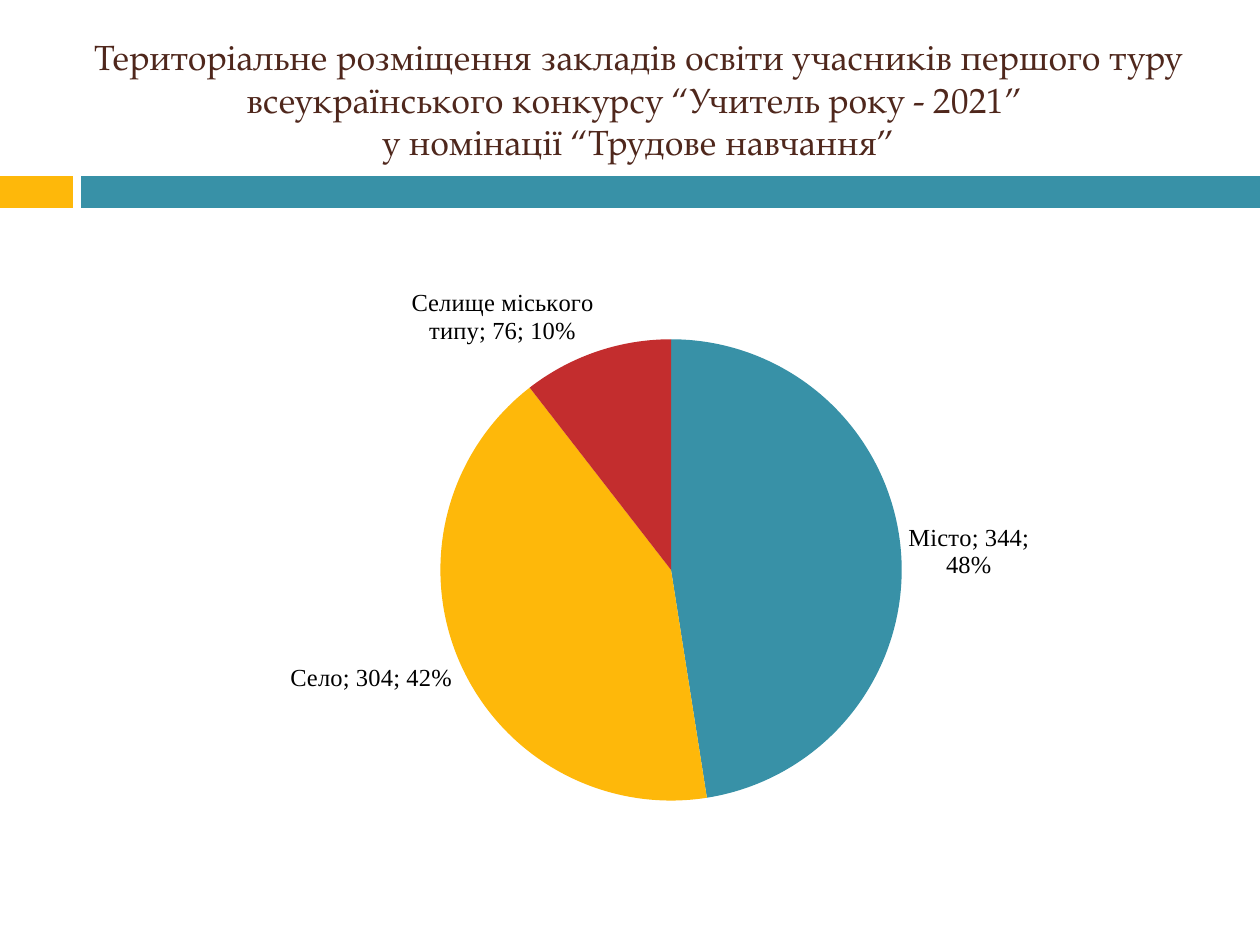
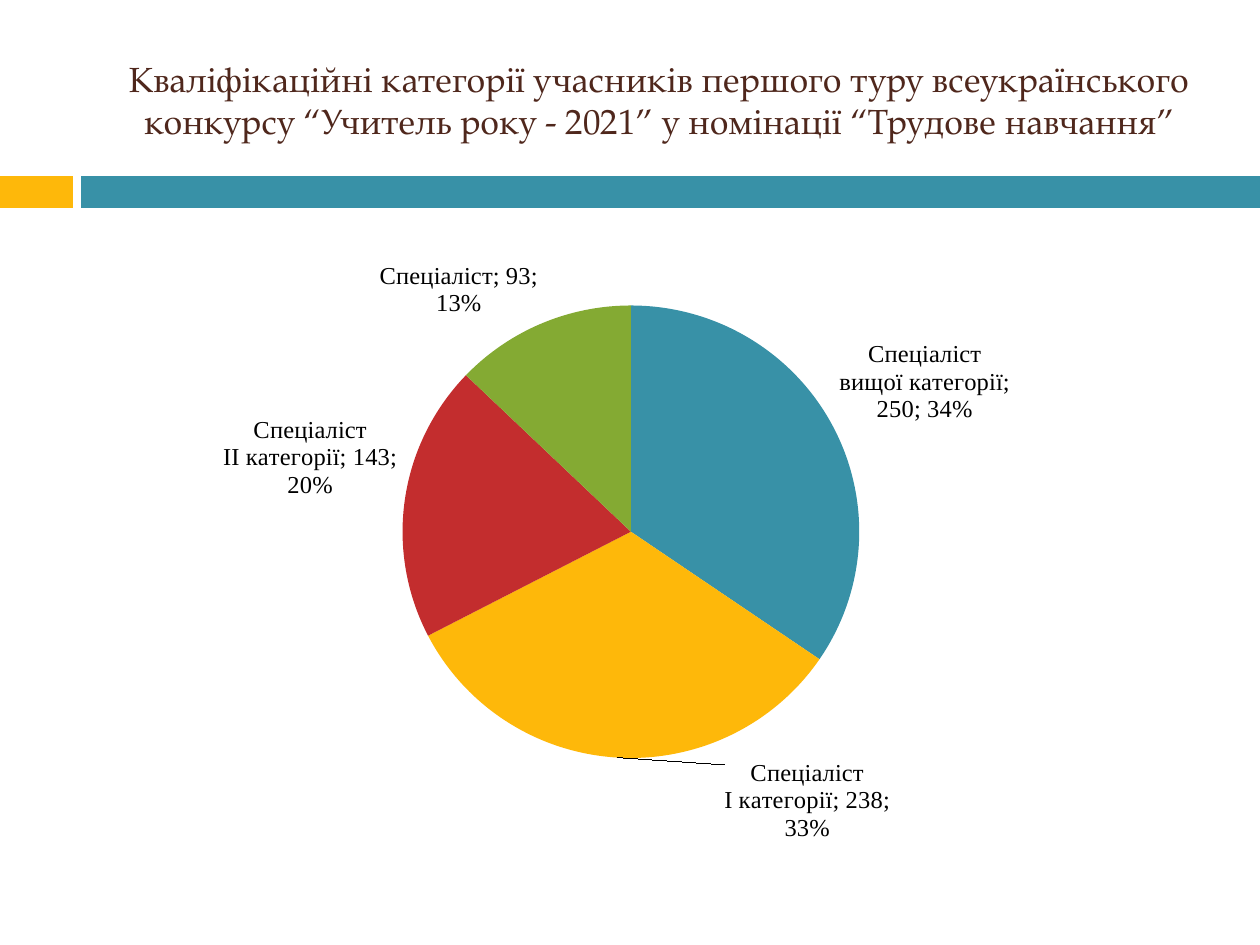
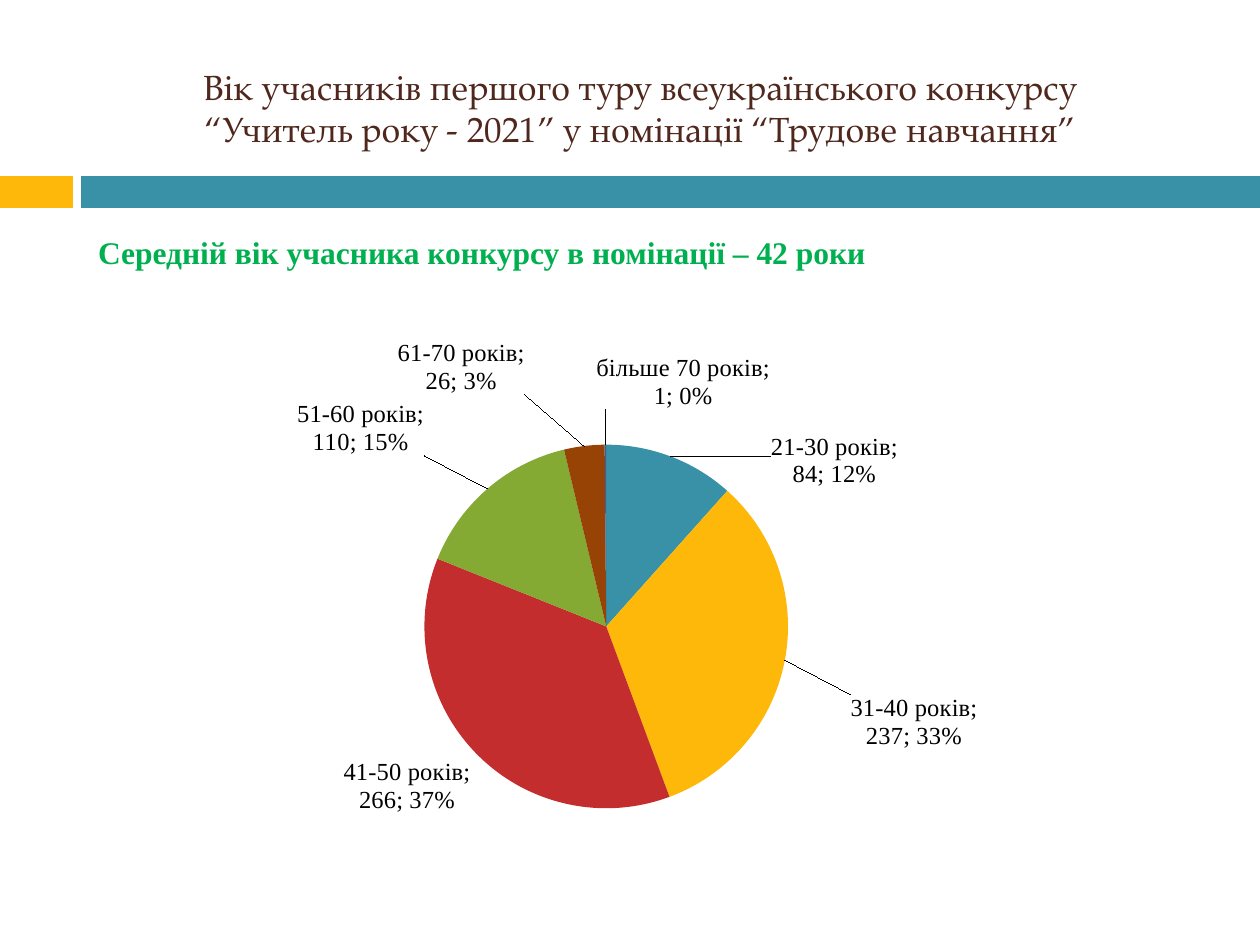
from dataclasses import dataclass
from typing import NamedTuple

import lxml.etree
import pptx
import pptx.chart.data
import pptx.dml.color
import pptx.enum.chart
import pptx.enum.shapes
import pptx.enum.text
import pptx.oxml.ns
import pptx.util

EMU_PER_PX = 914400 / 126
TEAL, AMBER, RED, GREEN, BROWN, INDIGO = (
    "3891A7", "FEB80A", "C32D2E", "84AA33", "964305", "475A8D")
SLICE_COLOURS = (TEAL, AMBER, RED, GREEN, BROWN, INDIGO)
TITLE_COLOUR = "4F271C"
ACCENT_TEXT = "00B050"
BLACK = "000000"
TITLE_FONT = "TeX Gyre Pagella"
BODY_FONT = "Times New Roman"
CHART_FONT = "Calibri"


class Box(NamedTuple):
    left: int
    top: int
    width: int
    height: int


class Band(NamedTuple):
    box: Box
    colour: str


class Fractions(NamedTuple):
    x: float
    y: float
    w: float | None = None
    h: float | None = None


class Slice(NamedTuple):
    category: str
    value: int
    label: str = ""
    offset: Fractions | None = None


@dataclass(frozen=True)
class PieSlide:
    title: str
    title_box: Box
    chart_box: Box
    slices: tuple[Slice, ...]
    plot: Fractions | None = None
    summary: str = ""


BANDS = (
    Band(Box(0, 176, 73, 32), AMBER),
    Band(Box(81, 176, 1179, 32), TEAL),
)
SUMMARY_BOX = Box(29, 227, 906, 50)

PIE_SLIDES = (
    PieSlide(
        "Територіальне розміщення закладів освіти учасників першого туру "
        "всеукраїнського конкурсу “Учитель року - 2021” \v"
        "у номінації “Трудове навчання”",
        Box(69, 31, 1139, 136),
        Box(178, 266, 955, 552),
        (
            Slice("Місто", 344),
            Slice("Село", 304),
            Slice("Селище міського типу", 76),
        ),
    ),
    PieSlide(
        "Кваліфікаційні категорії учасників першого туру всеукраїнського "
        "конкурсу “Учитель року - 2021” у номінації “Трудове навчання”",
        Box(84, 31, 1150, 136),
        Box(129, 246, 1004, 601),
        (
            Slice("Спеціаліст вищої категорії", 250,
                  "Спеціаліст\nвищої категорії; 250; 34%"),
            Slice("Спеціаліст І категорії", 238,
                  "Спеціаліст\nІ категорії; 238; 33%", Fractions(0.19, 0)),
            Slice("Спеціаліст ІІ категорії", 143,
                  "Спеціаліст\nІІ категорії; 143; 20%"),
            Slice("Спеціаліст", 93),
        ),
        Fractions(0.11, 0.1, 0.78, 0.76),
    ),
    PieSlide(
        "Вік учасників першого туру всеукраїнського конкурсу\v"
        "“Учитель року - 2021” у номінації “Трудове навчання”",
        Box(78, 39, 1124, 136),
        Box(129, 296, 974, 551),
        (
            Slice("21-30 років", 84, "21-30 років;\n84; 12%", Fractions(0.1, 0.07)),
            Slice("31-40 років", 237, "31-40 років;\n237; 33%", Fractions(0.06, 0.06)),
            Slice("41-50 років", 266, "41-50 років;\n266; 37%"),
            Slice("51-60 років", 110, "51-60 років;\n110; 15%", Fractions(-0.06, -0.05)),
            Slice("61-70 років", 26, "61-70 років;\n26; 3%", Fractions(-0.06, -0.08)),
            Slice("більше 70 років", 1, offset=Fractions(0.08, -0.05)),
        ),
        Fractions(0.14, 0.27, 0.7, 0.66),
        "Середній вік учасника конкурсу в номінації – 42 роки",
    ),
)


def px(length: int) -> int:
    return round(length * EMU_PER_PX)


def emu_box(box: Box) -> tuple[int, ...]:
    return tuple(px(length) for length in box)


def rgb(colour: str) -> pptx.dml.color.RGBColor:
    return pptx.dml.color.RGBColor.from_string(colour)


def set_font(font, name: str, size: int, colour: str, bold: bool = False) -> None:
    font.name = name
    font.size = pptx.util.Pt(size)
    font.bold = bold
    font.color.rgb = rgb(colour)


def chart_tag(name: str) -> str:
    return pptx.oxml.ns.qn(f"c:{name}")


def manual_layout(fractions: Fractions):
    layout = lxml.etree.Element(chart_tag("layout"))
    manual = lxml.etree.SubElement(layout, chart_tag("manualLayout"))
    settings = {}
    if fractions.w is not None:
        settings = {"layoutTarget": "inner", "xMode": "edge", "yMode": "edge"}
    for name, value in (settings | fractions._asdict()).items():
        if value is not None:
            lxml.etree.SubElement(manual, chart_tag(name), val=str(value))
    return layout


def show_all_parts(labels_xml) -> None:
    for name in ("showVal", "showCatName", "showPercent"):
        labels_xml.find(chart_tag(name)).set("val", "1")
    separator = lxml.etree.Element(chart_tag("separator"))
    separator.text = "; "
    labels_xml.find(chart_tag("showBubbleSize")).addnext(separator)


def add_slice_label(series, index: int, part: Slice) -> None:
    label = series.points[index].data_label
    if part.label:
        label.text_frame.text = part.label
        for paragraph in label.text_frame.paragraphs:
            set_font(paragraph.font, BODY_FONT, 14, BLACK)
    else:
        set_font(label.font, BODY_FONT, 14, BLACK)
    label.position = pptx.enum.chart.XL_LABEL_POSITION.OUTSIDE_END
    label_xml = series.data_labels._element.findall(chart_tag("dLbl"))[-1]
    show_all_parts(label_xml)
    if part.offset:
        label_xml.insert(1, manual_layout(part.offset))


def add_pie(slide, content: PieSlide) -> None:
    shares = pptx.chart.data.CategoryChartData()
    shares.categories = [part.category for part in content.slices]
    shares.add_series("Series 1", [part.value for part in content.slices])
    chart = slide.shapes.add_chart(
        pptx.enum.chart.XL_CHART_TYPE.PIE, *emu_box(content.chart_box), shares).chart
    chart.has_title = False
    chart.has_legend = False
    set_font(chart.font, CHART_FONT, 10, BLACK)
    pie = chart.plots[0]
    pie.vary_by_categories = True
    series = pie.series[0]

    labels = series.data_labels
    set_font(labels.font, BODY_FONT, 14, BLACK)
    labels.position = pptx.enum.chart.XL_LABEL_POSITION.OUTSIDE_END
    show_all_parts(labels._element)
    for index, (part, colour) in enumerate(zip(content.slices, SLICE_COLOURS)):
        fill = series.points[index].format.fill
        fill.solid()
        fill.fore_color.rgb = rgb(colour)
        if part.label or part.offset:
            add_slice_label(series, index, part)

    if content.plot:
        plot_area = chart._chartSpace.chart.plotArea
        for automatic in plot_area.findall(chart_tag("layout")):
            plot_area.remove(automatic)
        plot_area.insert(0, manual_layout(content.plot))


def add_band(slide, band: Band) -> None:
    stripe = slide.shapes.add_shape(
        pptx.enum.shapes.MSO_SHAPE.RECTANGLE, *emu_box(band.box))
    stripe.shadow.inherit = False
    stripe.fill.solid()
    stripe.fill.fore_color.rgb = rgb(band.colour)
    stripe.line.fill.background()


def format_title(slide, content: PieSlide) -> None:
    title = slide.shapes.title
    title.left, title.top, title.width, title.height = emu_box(content.title_box)
    frame = title.text_frame
    frame.text = content.title
    frame.word_wrap = True
    frame.auto_size = pptx.enum.text.MSO_AUTO_SIZE.NONE
    frame.vertical_anchor = pptx.enum.text.MSO_ANCHOR.MIDDLE
    paragraph = frame.paragraphs[0]
    paragraph.alignment = pptx.enum.text.PP_ALIGN.CENTER
    set_font(paragraph.font, TITLE_FONT, 20, TITLE_COLOUR)


def add_summary(slide, summary: str) -> None:
    frame = slide.shapes.add_textbox(*emu_box(SUMMARY_BOX)).text_frame
    frame.text = summary
    frame.word_wrap = True
    frame.auto_size = pptx.enum.text.MSO_AUTO_SIZE.SHAPE_TO_FIT_TEXT
    paragraph = frame.paragraphs[0]
    paragraph.alignment = pptx.enum.text.PP_ALIGN.CENTER
    set_font(paragraph.font, BODY_FONT, 18, ACCENT_TEXT, bold=True)


def main() -> None:
    presentation = pptx.Presentation()
    presentation.slide_width = px(1260)
    presentation.slide_height = px(945)
    title_only = presentation.slide_layouts[5]
    for content in PIE_SLIDES:
        slide = presentation.slides.add_slide(title_only)
        for band in BANDS:
            add_band(slide, band)
        format_title(slide, content)
        if content.summary:
            add_summary(slide, content.summary)
        add_pie(slide, content)
    presentation.save("out.pptx")


if __name__ == "__main__":
    main()
